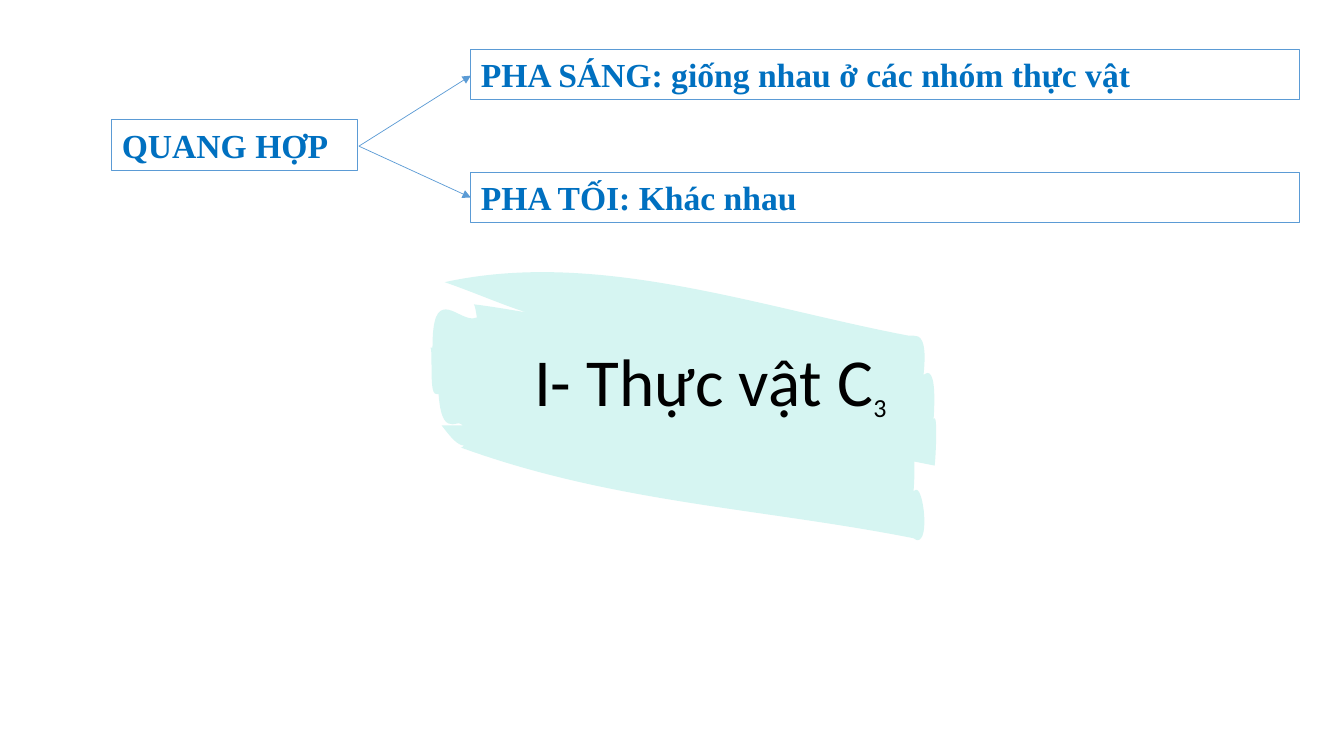
from lxml import etree
from pptx import Presentation
from pptx import util as u
from pptx.dml.color import RGBColor
from pptx.enum import shapes, text
from pptx.oxml.ns import qn

# Brush stroke outline in inches: pairs are lines, sixes are Bézier curves
BRUSH_BOX = (4.27, 2.7, 5.04, 2.66)
BRUSH_START = (9.1, 5.36)
BRUSH = [
    (9.09, 5.36, 9.08, 5.35, 9.06, 5.34),
    (7.54, 5.04, 6.08, 4.99, 4.57, 4.44),
    (4.58, 4.44, 4.59, 4.44, 4.6, 4.42),
    (4.54, 4.42, 4.47, 4.34, 4.38, 4.22),
    (4.59, 4.22),
    (4.58, 4.21, 4.56, 4.2, 4.55, 4.2),
    (4.53, 4.2, 4.51, 4.21, 4.49, 4.21),
    (4.43, 4.21, 4.37, 4.18, 4.35, 3.91),
    (4.34, 3.91, 4.33, 3.91, 4.33, 3.91),
    (4.28, 3.91, 4.28, 3.8, 4.28, 3.51),
    (4.28, 3.48, 4.27, 3.45, 4.27, 3.45),
    (4.29, 3.45),
    (4.29, 3.15, 4.34, 3.07, 4.42, 3.07),
    (4.5, 3.07, 4.6, 3.16, 4.69, 3.16),
    (4.7, 3.16, 4.72, 3.15, 4.73, 3.15),
    (4.72, 3.08, 4.71, 3.03, 4.7, 3.02),
    (4.87, 3.04, 5.04, 3.07, 5.22, 3.1),
    (4.97, 3.02, 4.7, 2.9, 4.41, 2.8),
    (4.73, 2.73, 5.05, 2.7, 5.38, 2.7),
    (6.59, 2.7, 7.85, 3.11, 9.01, 3.33),
    (9.02, 3.33, 9.03, 3.33, 9.04, 3.33),
    (9.05, 3.33, 9.05, 3.33, 9.06, 3.33),
    (9.12, 3.33, 9.2, 3.35, 9.16, 3.72),
    (9.18, 3.71, 9.19, 3.7, 9.2, 3.7),
    (9.26, 3.7, 9.28, 3.86, 9.26, 4.16),
    (9.26, 4.16, 9.26, 4.15, 9.27, 4.15),
    (9.3, 4.15, 9.28, 4.56, 9.27, 4.62),
    (9.07, 4.58),
    (9.07, 4.69, 9.07, 4.78, 9.06, 4.88),
    (9.07, 4.86, 9.08, 4.86, 9.09, 4.86),
    (9.16, 4.86, 9.22, 5.36, 9.1, 5.36),
]


def rgb(color):
    return RGBColor.from_string(color)


def add_text(p, content, size, font, color, bold=False, baseline=None):
    r = p.add_run()
    r.text = content
    r.font.size = u.Pt(size)
    r.font.name = font
    r.font.bold = bold
    r.font.color.rgb = rgb(color)
    if baseline is not None:
        r.font._element.set("baseline", str(baseline))


class SlideBuilder:
    BLUE = "0070C0"
    BORDER = "5B9BD5"
    TEAL = "00C3B1"

    def __init__(self, slide):
        self.shapes = slide.shapes

    def brush(self, box, start, segments, opacity):
        left, top, width, height = map(u.Inches, box)
        builder = self.shapes.build_freeform(*map(u.Inches, start))
        ends = [tuple(map(u.Inches, seg[-2:])) for seg in segments]
        builder.add_line_segments(ends, close=True)
        sp = builder.convert_to_shape()
        sp.left, sp.top, sp.width, sp.height = left, top, width, height
        sp.shadow.inherit = False
        sp.fill.solid()
        sp.fill.fore_color.rgb = rgb(self.TEAL)
        color = sp._element.spPr.find(qn("a:solidFill"))[0]
        etree.SubElement(color, qn("a:alpha")).set("val", str(opacity * 1000))
        sp.line.fill.background()

        # Bend the straight segments that have control points
        outline = next(sp._element.iter(qn("a:pathLst")))[0]
        outline.set("w", str(width))
        outline.set("h", str(height))
        for seg, line in zip(segments, outline.findall(qn("a:lnTo"))):
            if len(seg) == 2:
                continue
            curve = etree.Element(qn("a:cubicBezTo"))
            for x, y in zip(seg[::2], seg[1::2]):
                pt = etree.SubElement(curve, qn("a:pt"))
                pt.set("x", str(u.Inches(x) - left))
                pt.set("y", str(u.Inches(y) - top))
            outline.replace(line, curve)

    def title(self, x, y, w, h, content, subscript):
        sp = self.shapes.add_textbox(*map(u.Inches, (x, y, w, h)))
        tf = sp.text_frame
        tf.word_wrap = True
        tf.vertical_anchor = text.MSO_ANCHOR.MIDDLE
        tf.margin_left = tf.margin_right = u.Inches(0.13)
        tf.margin_top = tf.margin_bottom = u.Inches(0.13)
        p = tf.paragraphs[0]
        p.alignment = text.PP_ALIGN.CENTER
        p.line_spacing = 0.9
        add_text(p, content, 48, "Calibri", "000000")
        add_text(p, subscript, 32, "Calibri", "000000", baseline=-25000)

    def box(self, x, y, w, h, content):
        sp = self.shapes.add_shape(shapes.MSO_SHAPE.RECTANGLE,
                                   *map(u.Inches, (x, y, w, h)))
        sp.shadow.inherit = False
        sp.fill.background()
        sp.line.color.rgb = rgb(self.BORDER)
        sp.line.width = u.Pt(0.75)
        tf = sp.text_frame
        tf.word_wrap = True
        tf.auto_size = text.MSO_AUTO_SIZE.SHAPE_TO_FIT_TEXT
        tf.vertical_anchor = text.MSO_ANCHOR.TOP
        p = tf.paragraphs[0]
        p.alignment = text.PP_ALIGN.LEFT
        add_text(p, content, 24, "Times New Roman", self.BLUE, bold=True)

    def arrow(self, x1, y1, x2, y2):
        line = self.shapes.add_connector(shapes.MSO_CONNECTOR.STRAIGHT,
                                         *map(u.Inches, (x1, y1, x2, y2)))
        line.line.color.rgb = rgb(self.BORDER)
        line.line.width = u.Pt(0.5)
        ln = line.line._get_or_add_ln()
        etree.SubElement(ln, qn("a:tailEnd")).set("type", "triangle")
        etree.SubElement(line._element.spPr, qn("a:effectLst"))


def main():
    prs = Presentation()
    prs.slide_width, prs.slide_height = u.Inches(13.33), u.Inches(7.5)
    s = SlideBuilder(prs.slides.add_slide(prs.slide_layouts[6]))

    # Section title on a brush stroke
    s.brush(BRUSH_BOX, BRUSH_START, BRUSH, opacity=16)
    s.title(3.6, 2.92, 6.89, 1.78, "I- Thực vật C", "3")

    # Photosynthesis and its two phases
    box_h, phase_x = 0.5, 4.67
    s.box(1.11, 1.19, 2.44, box_h, "QUANG HỢP")
    s.box(phase_x, 1.71, 8.22, box_h, "PHA TỐI: Khác nhau")
    s.box(phase_x, 0.49, 8.22, box_h, "PHA SÁNG: giống nhau ở các nhóm thực vật")

    # Arrows to the phases
    for phase_y in (0.75, 1.96):
        s.arrow(3.56, 1.45, phase_x, phase_y)

    prs.save("out.pptx")


if __name__ == "__main__":
    main()
